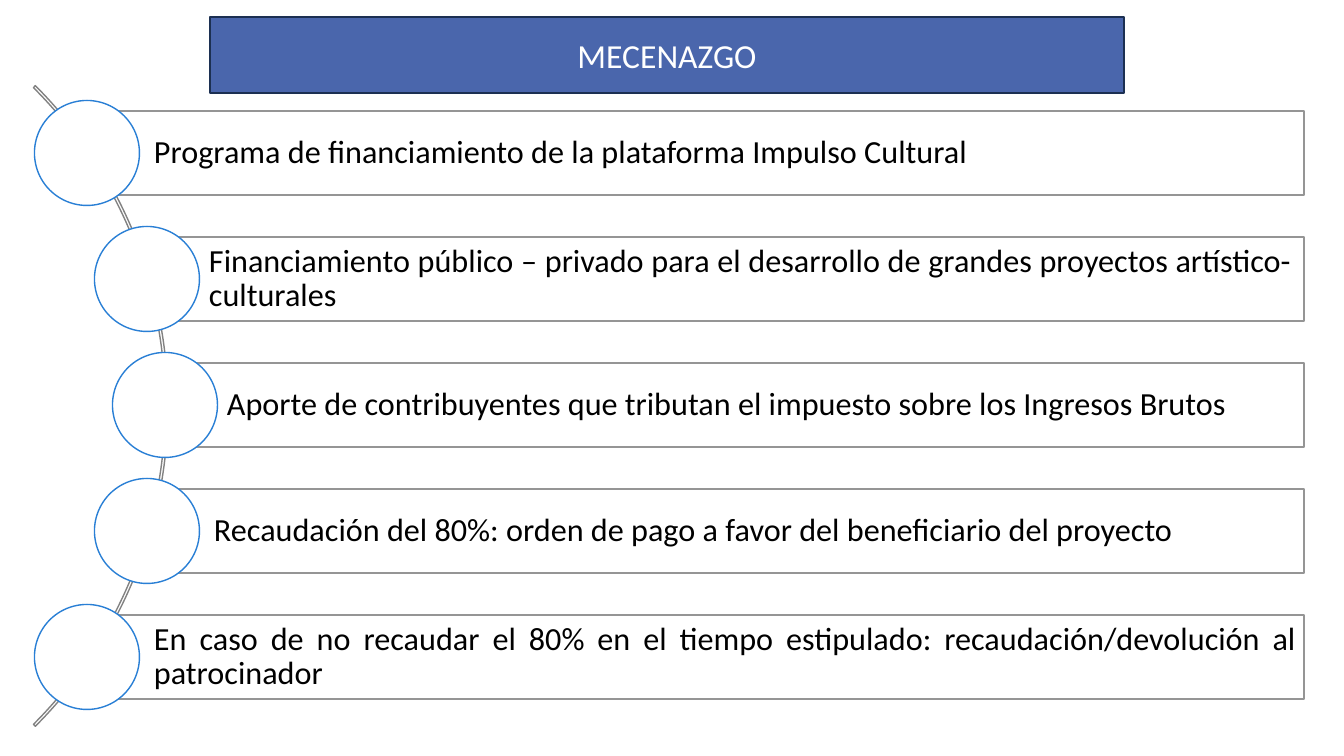
from math import sqrt
from pptx import Presentation
from pptx import util as u
from pptx.dml.color import RGBColor
from pptx.enum import shapes, text
from pptx.oxml import parse_xml
from pptx.oxml.ns import nsdecls

TITLE = "MECENAZGO"
POINTS = [
    ("Programa de financiamiento de la plataforma Impulso Cultural", 0),
    ("Financiamiento público – privado para el desarrollo de grandes proyectos artístico-culturales", 5),
    ("Aporte de contribuyentes que tributan el impuesto sobre los Ingresos Brutos", 5),
    ("Recaudación del 80%: orden de pago a favor del beneficiario del proyecto", 0),
    ("En caso de no recaudar el 80% en el tiempo estipulado: recaudación/devolución al patrocinador", 0),
]
COLORS = {
    "white": "FFFFFF", "black": "000000", "arc": "828282", "bar": "959595",
    "circle": "297FD5", "title": "4A66AC", "title_edge": "1C3052",
}
FONT = "Calibri"
PAGE_W, PAGE_H = 1344, 756
SCALE = 12192000 / PAGE_W
ARC_X, ARC_Y, ARC_SIZE = -738, -47, 906
CENTER_X, CENTER_RADIUS = -285, 450
BAR_TOP, BAR_H, BAR_RIGHT, PITCH = 111, 84, 1304, 126
CIRCLE = 105
INDENT, MARGIN = 67, 6


def px(value):
    return u.Emu(round(value * SCALE))


def color(name):
    return RGBColor.from_string(COLORS[name])


def paint(shape, fill, edge):
    if fill:
        shape.fill.solid()
        shape.fill.fore_color.rgb = color(fill)
    else:
        shape.fill.background()
    shape.line.color.rgb = color(edge)
    shape.line.width = u.Pt(1)


def add_shape(kind, x, y, w, h, fill, edge):
    shape = page.shapes.add_shape(kind, px(x), px(y), px(w), px(h))
    shape.shadow.inherit = False
    paint(shape, fill, edge)
    return shape


def write(shape, words, size, ink, align, spacing, left, right, vertical):
    frame = shape.text_frame
    frame.word_wrap = True
    frame.auto_size = text.MSO_AUTO_SIZE.NONE
    frame.vertical_anchor = text.MSO_ANCHOR.MIDDLE
    frame.margin_left, frame.margin_right = px(left), px(right)
    frame.margin_top = frame.margin_bottom = px(vertical)
    para = frame.paragraphs[0]
    para.alignment = align
    para.line_spacing = spacing
    para.space_before = u.Pt(0)
    span = para.add_run()
    span.text = words
    span.font.name = FONT
    span.font.size = u.Pt(size)
    span.font.color.rgb = color(ink)


deck = Presentation()
deck.slide_width, deck.slide_height = px(PAGE_W), px(PAGE_H)
page = deck.slides.add_slide(deck.slide_layouts[5])

title = page.shapes.title
title.left, title.top, title.width, title.height = px(210), px(17), px(914), px(76)
title.element.spPr.append(parse_xml(
    f'<a:prstGeom {nsdecls("a")} prst="roundRect"><a:avLst>'
    '<a:gd name="adj" fmla="val 16667"/></a:avLst></a:prstGeom>'))
paint(title, "title", "title_edge")
write(title, TITLE, 24, "white", text.PP_ALIGN.CENTER, 1, 10, 10, 5)

arc = add_shape(shapes.MSO_SHAPE.BLOCK_ARC, ARC_X, ARC_Y, ARC_SIZE, ARC_SIZE, None, "arc")
for index, value in enumerate((189, 27, 0.003)):
    arc.adjustments[index] = value

for row, (words, shift) in enumerate(POINTS):
    rise = (row - len(POINTS) // 2) * PITCH
    left = CENTER_X + int(sqrt(CENTER_RADIUS ** 2 - rise ** 2))
    top = BAR_TOP + row * PITCH
    bar = add_shape(shapes.MSO_SHAPE.RECTANGLE, left, top, BAR_RIGHT - left, BAR_H, "white", "bar")
    write(bar, words, 23, "black", text.PP_ALIGN.JUSTIFY, 0.9, INDENT - shift, MARGIN + shift, MARGIN)
    add_shape(shapes.MSO_SHAPE.OVAL, left - CIRCLE / 2, top + (BAR_H - CIRCLE) / 2,
              CIRCLE, CIRCLE, "white", "circle")

deck.save("out.pptx")
